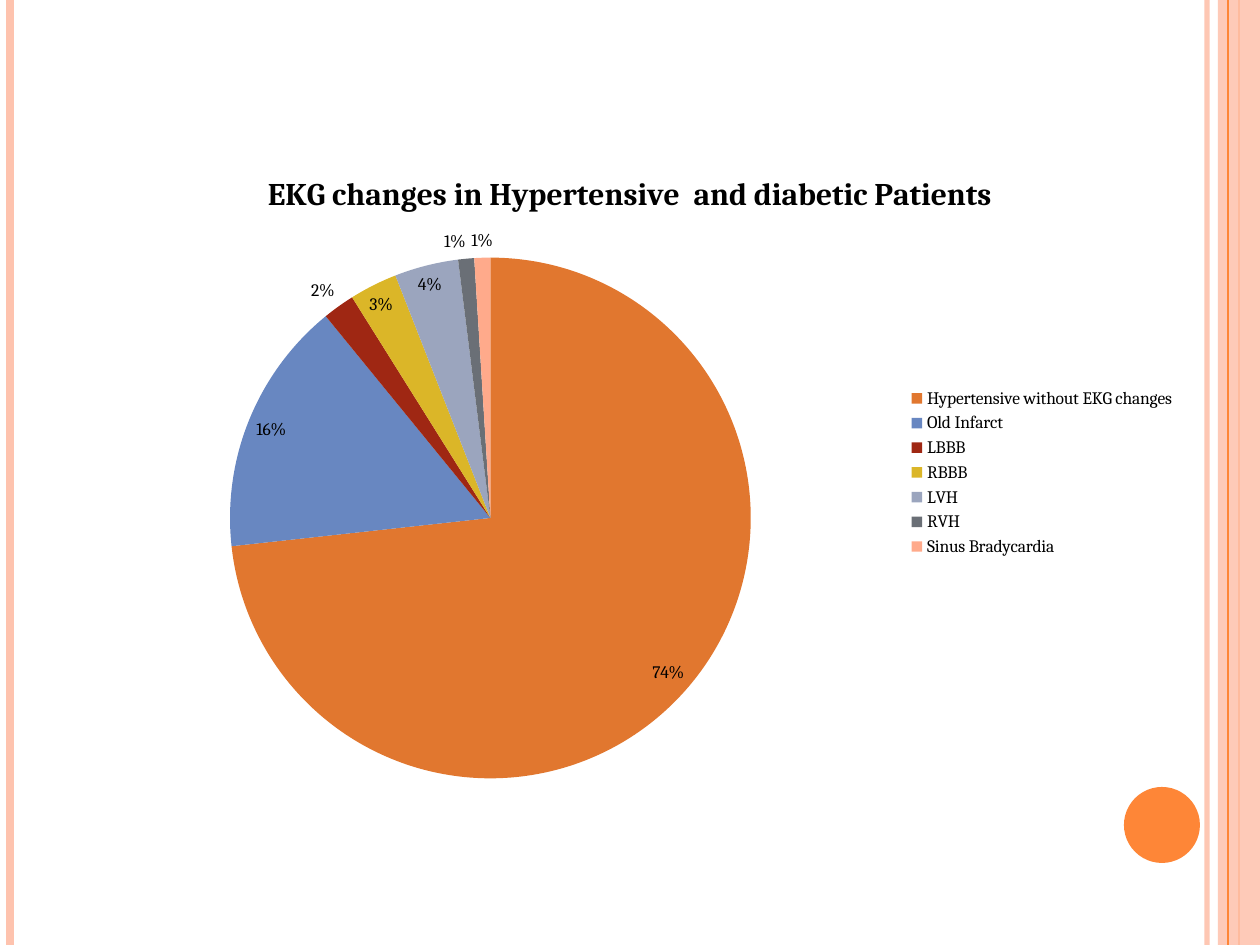
from pptx import Presentation
from pptx.chart.data import CategoryChartData
from pptx.dml.color import RGBColor
from pptx.enum.chart import XL_CHART_TYPE, XL_LABEL_POSITION, XL_LEGEND_POSITION
from pptx.enum.shapes import MSO_CONNECTOR, MSO_SHAPE
from pptx.oxml import parse_xml
from pptx.oxml.ns import nsdecls, qn
from pptx.util import Emu, Pt
from lxml import etree

PIE = XL_CHART_TYPE.PIE
BEST_FIT = XL_LABEL_POSITION.BEST_FIT
RIGHT = XL_LEGEND_POSITION.RIGHT
STRAIGHT = MSO_CONNECTOR.STRAIGHT
RECT, OVAL = MSO_SHAPE.RECTANGLE, MSO_SHAPE.OVAL

BLACK = RGBColor(0x00, 0x00, 0x00)
PEACH = RGBColor(0xFE, 0xC3, 0xAE)
ORANGE = RGBColor(0xFE, 0x86, 0x37)
FONT = "Cambria"
PX = 914400 // 126
W, H = 1260, 945

TITLE = "EKG changes in Hypertensive  and diabetic Patients"
SLICES = [
    ("Hypertensive without EKG changes", 74, RGBColor(0xE1, 0x77, 0x2F)),
    ("Old Infarct", 16, RGBColor(0x68, 0x87, 0xC1)),
    ("LBBB", 2, RGBColor(0x9F, 0x27, 0x13)),
    ("RBBB", 3, RGBColor(0xDB, 0xB6, 0x28)),
    ("LVH", 4, RGBColor(0x9B, 0xA5, 0xBE)),
    ("RVH", 1, RGBColor(0x6A, 0x6F, 0x76)),
    ("Sinus Bradycardia", 1, RGBColor(0xFF, 0xAA, 0x8B)),
]


def px(n):
    return Emu(n * PX)


def set_alpha(el, percent):
    clr = next(el.iter(qn("a:srgbClr")))
    etree.SubElement(clr, qn("a:alpha")).set("val", str(percent * 1000))


def add_stripe(s, x, color, width, alpha=100):
    line = s.shapes.add_connector(STRAIGHT, px(x), 0, px(x), px(H))
    line.line.color.rgb = color
    line.line.width = Pt(width)
    sp_pr = line._element.spPr
    etree.SubElement(sp_pr, qn("a:effectLst"))
    if alpha < 100:
        set_alpha(sp_pr, alpha)


def add_solid(s, kind, x, y, w, h, color, alpha=100):
    sp = s.shapes.add_shape(kind, px(x), px(y), px(w), px(h))
    sp.shadow.inherit = False
    sp.fill.solid()
    sp.fill.fore_color.rgb = color
    sp.line.fill.background()
    if alpha < 100:
        set_alpha(sp._element.spPr, alpha)


def style_font(font, size, bold=False):
    font.name = FONT
    font.size = Pt(size)
    font.bold = bold
    font.color.rgb = BLACK


def set_plot_layout(chart, x, y, w, h):
    area = chart._chartSpace.find(qn("c:chart")).find(qn("c:plotArea"))
    for old in area.findall(qn("c:layout")):
        area.remove(old)
    area.insert(0, parse_xml(
        f'<c:layout {nsdecls("c")}><c:manualLayout>'
        '<c:layoutTarget val="inner"/><c:xMode val="edge"/><c:yMode val="edge"/>'
        f'<c:x val="{x}"/><c:y val="{y}"/><c:w val="{w}"/><c:h val="{h}"/>'
        '</c:manualLayout></c:layout>'))


def add_pie(s, x, y, w, h):
    data = CategoryChartData()
    data.categories = [name for name, _, _ in SLICES]
    data.add_series("Series 1", [value for _, value, _ in SLICES])
    chart = s.shapes.add_chart(PIE, px(x), px(y), px(w), px(h), data).chart
    style_font(chart.font, 10)

    chart.has_title = True
    r = chart.chart_title.text_frame.paragraphs[0].add_run()
    r.text = TITLE
    style_font(r.font, 18, True)
    chart.chart_title.include_in_layout = False

    chart.has_legend = True
    chart.legend.position = RIGHT
    chart.legend.include_in_layout = False
    style_font(chart.legend.font, 10)

    plot = chart.plots[0]
    plot.vary_by_categories = True
    for i, (_, _, color) in enumerate(SLICES):
        fill = plot.series[0].points[i].format.fill
        fill.solid()
        fill.fore_color.rgb = color

    plot.has_data_labels = True
    labels = plot.data_labels
    labels.show_value = True
    labels.number_format = '0"%"'
    labels.number_format_is_linked = False
    labels.position = BEST_FIT
    style_font(labels.font, 10)
    set_plot_layout(chart, 0.14, 0.17, 0.47, 0.8)


def main():
    prs = Presentation()
    prs.slide_width, prs.slide_height = px(W), px(H)
    s = prs.slides.add_slide(prs.slide_layouts[6])
    add_stripe(s, 1207, PEACH, 3, 93)
    add_stripe(s, 10, PEACH, 4.5)
    add_stripe(s, 1239, ORANGE, 1.5)
    add_solid(s, RECT, 1218, 0, 42, H, PEACH, 87)
    add_stripe(s, 1228, ORANGE, 0.75)
    add_solid(s, OVAL, 1124, 787, 76, 76, ORANGE)
    add_pie(s, 72, 147, 1116, 651)
    prs.save("out.pptx")


if __name__ == "__main__":
    main()
